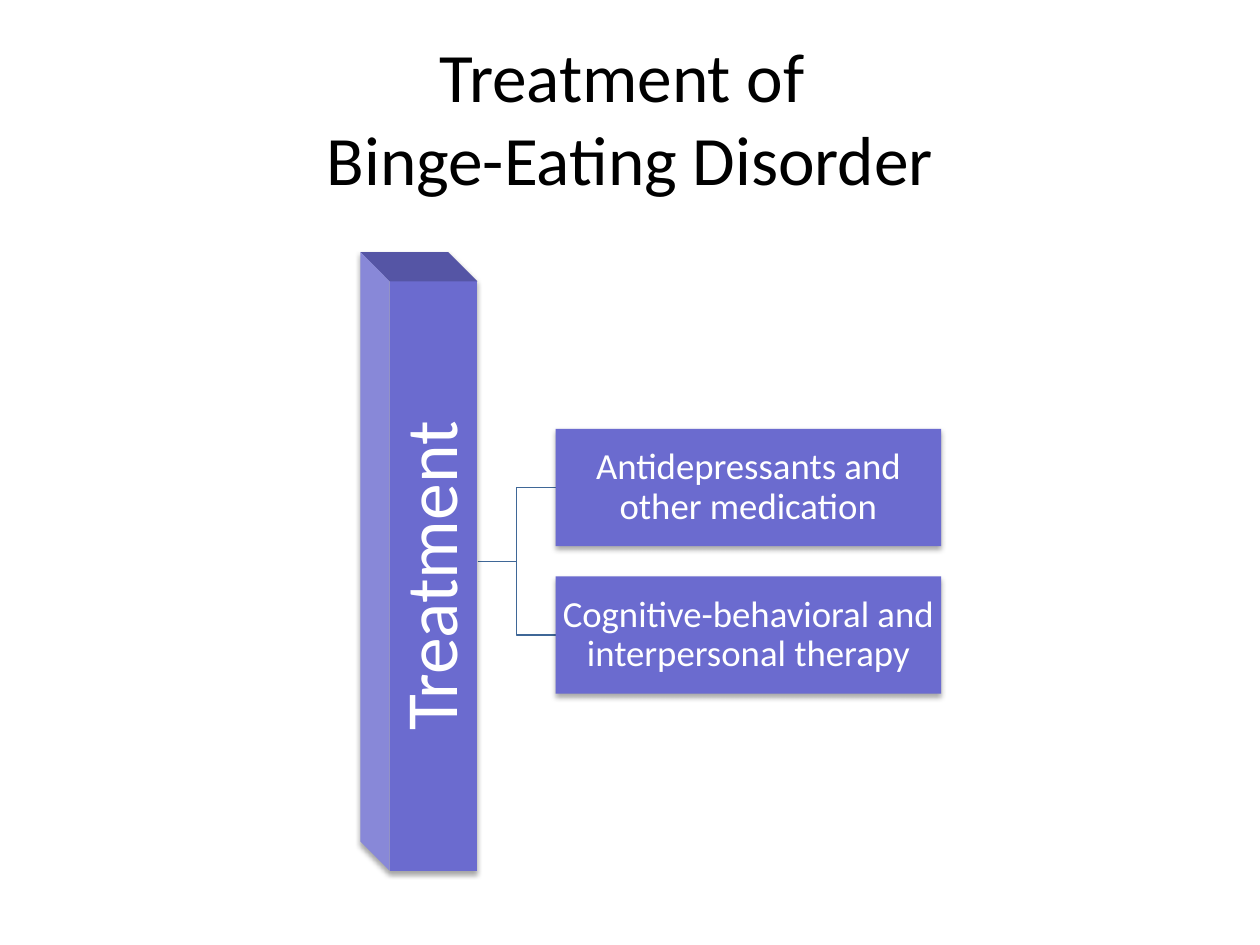
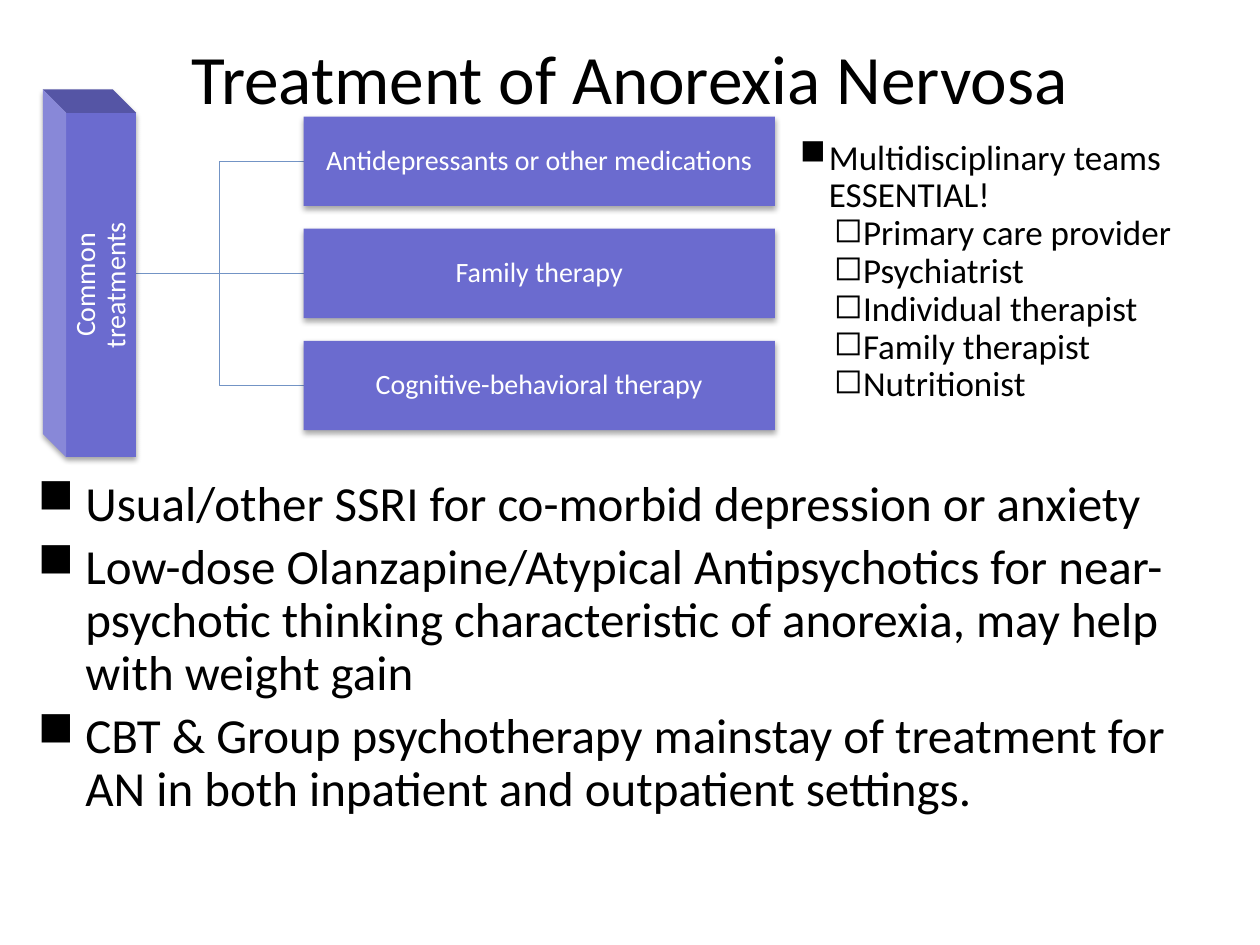
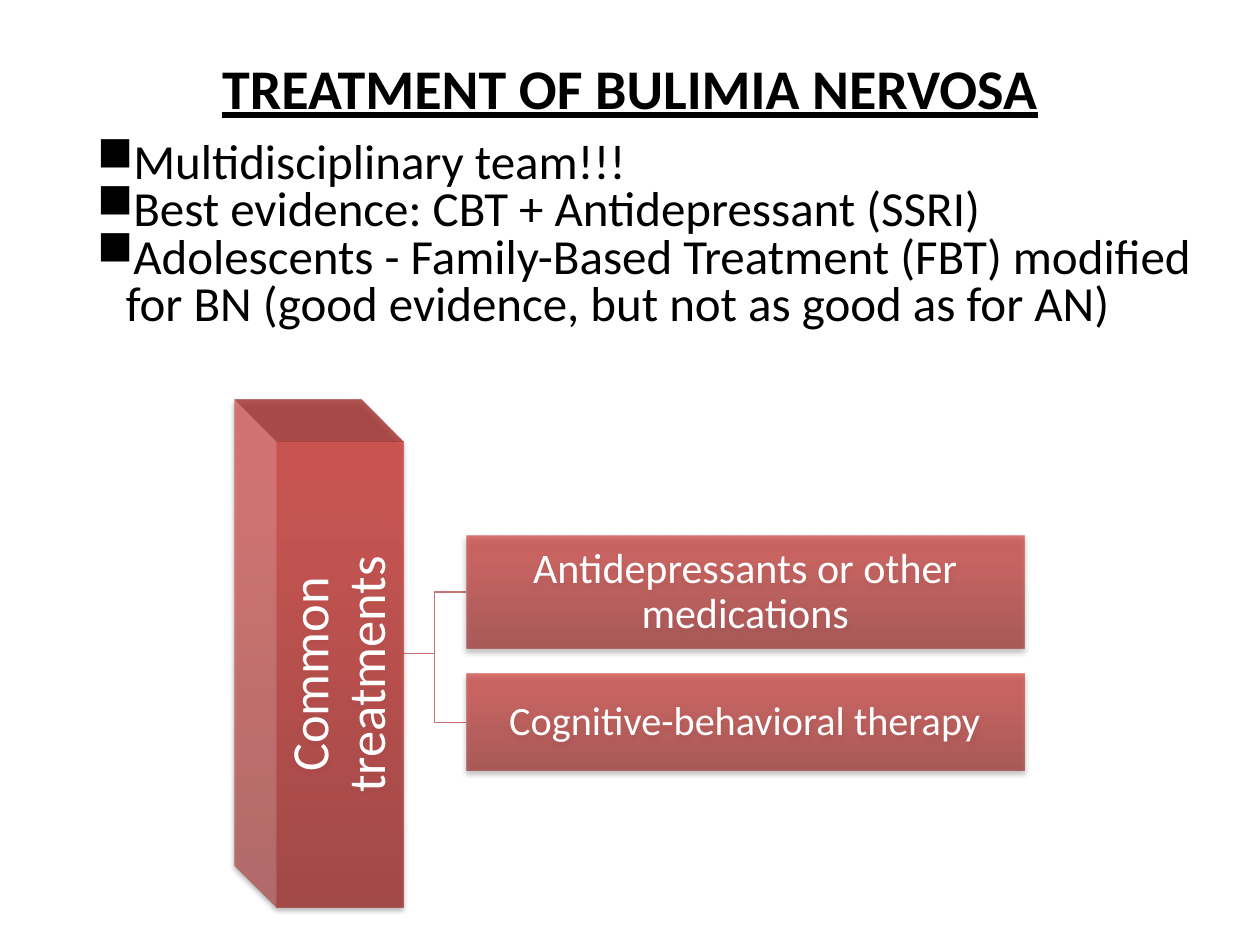
from dataclasses import dataclass

from pptx import Presentation
from pptx.dml.color import RGBColor
from pptx.enum.shapes import MSO_CONNECTOR, MSO_SHAPE
from pptx.enum.text import MSO_ANCHOR, MSO_AUTO_SIZE, PP_ALIGN
from pptx.oxml import parse_xml
from pptx.oxml.ns import nsdecls, qn
from pptx.util import Inches, Pt

FONT = "Calibri"
BLACK = RGBColor(0x00, 0x00, 0x00)
WHITE = RGBColor(0xFF, 0xFF, 0xFF)
VIOLET = RGBColor(0x6B, 0x6B, 0xCF)
DARK_BLUE = RGBColor(0x3F, 0x67, 0x97)
LIGHT_BLUE = RGBColor(0x73, 0x94, 0xC5)
ROSE = RGBColor(0xC7, 0x74, 0x72)
RED_STOPS = (
    (0, RGBColor(0x9C, 0x2F, 0x2D)),
    (80, RGBColor(0xCB, 0x3E, 0x3A)),
    (100, RGBColor(0xCE, 0x3B, 0x37)),
)
HANGING = 0.23


@dataclass
class Tree:
    label: str
    label_size: float
    cube: tuple
    branches: list
    branch_left: float
    branch_width: float
    gap: float
    line_color: RGBColor
    red: bool = False


@dataclass
class Bullet:
    text: str
    symbol: str = "■"
    margin: float = HANGING
    hanging: float = HANGING


def format_paragraph(paragraph, size, color, alignment=None, spacing=None):
    paragraph.alignment = alignment
    paragraph.line_spacing = spacing
    for run in paragraph.runs:
        run.font.name = FONT
        run.font.size = Pt(size)
        run.font.color.rgb = color


def add_titled_slide(presentation, text, height, size=39.6, emphasis=False):
    slide = presentation.slides.add_slide(presentation.slide_layouts[5])
    title = slide.shapes.title
    title.left, title.top = Inches(0.5), Inches(0.3)
    title.width, title.height = Inches(9), Inches(height)
    frame = title.text_frame
    frame.text = text
    frame.auto_size = MSO_AUTO_SIZE.NONE
    frame.vertical_anchor = MSO_ANCHOR.MIDDLE
    format_paragraph(frame.paragraphs[0], size, BLACK, PP_ALIGN.CENTER)
    if emphasis:
        for run in frame.paragraphs[0].runs:
            run.font.bold = True
            run.font.underline = True
    return slide


def set_red_gradient(shape, opacity):
    stops = "".join(
        f'<a:gs pos="{position * 1000}"><a:srgbClr val="{color}">'
        f'<a:alpha val="{opacity * 1000}"/></a:srgbClr></a:gs>'
        for position, color in RED_STOPS
    )
    gradient = parse_xml(
        f'<a:gradFill {nsdecls("a")} rotWithShape="0"><a:gsLst>{stops}</a:gsLst>'
        '<a:lin ang="16200000" scaled="0"/></a:gradFill>'
    )
    shape.fill.background()
    properties = shape.element.spPr
    properties.replace(properties.find(qn("a:noFill")), gradient)


def add_shadow(shape):
    shape.shadow.inherit = False
    shape.element.spPr.find(qn("a:effectLst")).append(parse_xml(
        f'<a:outerShdw {nsdecls("a")} blurRad="{Pt(3.1)}" dist="{Pt(1.8)}" '
        'dir="5400000" rotWithShape="0"><a:srgbClr val="000000">'
        '<a:alpha val="35000"/></a:srgbClr></a:outerShdw>'
    ))


def add_block(slide, kind, box, text, size, red_opacity=None):
    shape = slide.shapes.add_shape(kind, *map(Inches, box))
    if red_opacity:
        set_red_gradient(shape, red_opacity)
    else:
        shape.fill.solid()
        shape.fill.fore_color.rgb = VIOLET
    shape.line.fill.background()
    add_shadow(shape)
    frame = shape.text_frame
    frame.text = text
    frame.word_wrap = True
    frame.vertical_anchor = MSO_ANCHOR.MIDDLE
    frame.margin_left = frame.margin_right = Inches(0.01)
    frame.margin_top = frame.margin_bottom = Inches(0.01)
    format_paragraph(frame.paragraphs[0], size, WHITE, PP_ALIGN.CENTER, 0.9)
    return shape


def add_link(slide, start, end, color):
    kind = MSO_CONNECTOR.STRAIGHT if start[1] == end[1] else MSO_CONNECTOR.ELBOW
    link = slide.shapes.add_connector(kind, *map(Inches, (*start, *end)))
    link.line.color.rgb = color
    link.line.width = Pt(0.75)
    link.element.spPr.append(parse_xml(f'<a:effectLst {nsdecls("a")}/>'))


def add_tree(slide, tree):
    left, top, width, height = tree.cube
    middle = round(top + height / 2, 3)
    total = sum(branch[1] for branch in tree.branches)
    total += tree.gap * (len(tree.branches) - 1)
    branch_top = middle - total / 2
    boxes = []
    for _, branch_height, _ in tree.branches:
        boxes.append((tree.branch_left, branch_top, tree.branch_width, branch_height))
        branch_top += branch_height + tree.gap

    for box in reversed(boxes):
        end = (tree.branch_left, round(box[1] + box[3] / 2, 3))
        add_link(slide, (left + width, middle), end, tree.line_color)

    turned_box = (left + (width - height) / 2, top + (height - width) / 2, height, width)
    cube = add_block(slide, MSO_SHAPE.CUBE, turned_box, tree.label, tree.label_size,
                     80 if tree.red else None)
    cube.rotation = 270
    for (text, _, size), box in zip(tree.branches, boxes):
        add_block(slide, MSO_SHAPE.RECTANGLE, box, text, size, 70 if tree.red else None)


def add_bullets(slide, box, bullets, size, spacing, space_before=0):
    frame = slide.shapes.add_textbox(*map(Inches, box)).text_frame
    frame.word_wrap = True
    frame.auto_size = MSO_AUTO_SIZE.SHAPE_TO_FIT_TEXT
    for index, bullet in enumerate(bullets):
        paragraph = frame.add_paragraph() if index else frame.paragraphs[0]
        paragraph.text = bullet.text
        properties = paragraph._p.get_or_add_pPr()
        properties.set("marL", str(Inches(bullet.margin)))
        properties.set("indent", str(-Inches(bullet.hanging)))
        properties.append(parse_xml(
            f'<a:buChar {nsdecls("a")} char="{bullet.symbol}"/>'
        ))
        format_paragraph(paragraph, size, BLACK, spacing=spacing)
        paragraph.space_before = Pt(space_before if index else 0)


def build_binge_eating(presentation):
    slide = add_titled_slide(presentation, "Treatment of \vBinge-Eating Disorder", 1.25)
    add_tree(slide, Tree(
        "Treatment", 42, (2.86, 2, 0.93, 4.91),
        [("Antidepressants and other medication", 0.93, 21),
         ("Cognitive-behavioral and interpersonal therapy", 0.93, 21)],
        4.41, 3.06, 0.24, DARK_BLUE,
    ))


def build_anorexia(presentation):
    slide = add_titled_slide(presentation, "Treatment of Anorexia Nervosa", 0.62)
    therapies = ("Antidepressants or other medications", "Family therapy",
                 "Cognitive-behavioral therapy")
    add_tree(slide, Tree(
        "Common\vtreatments", 16, (0.34, 0.71, 0.74, 2.92),
        [(therapy, 0.71, 16) for therapy in therapies],
        2.41, 3.74, 0.18, LIGHT_BLUE,
    ))
    members = ("Primary care provider", "Psychiatrist", "Individual therapist",
               "Family therapist", "Nutritionist")
    team = [Bullet("Multidisciplinary teams ESSENTIAL!")]
    team += [Bullet(member, "◻", 0.5) for member in members]
    add_bullets(slide, (6.25, 1.06, 3.52, 2.22), team, 20, 0.9)
    notes = (
        "Usual/other SSRI for co-morbid depression or anxiety",
        "Low-dose Olanzapine/Atypical Antipsychotics for near-psychotic thinking "
        "characteristic of anorexia, may help with weight gain",
        "CBT & Group psychotherapy mainstay of treatment for AN in both inpatient "
        "and outpatient settings.",
    )
    add_bullets(slide, (0.2, 3.75, 9.3, 2.83),
                [Bullet(note, margin=0.38, hanging=0.38) for note in notes], 28, 0.9, 6)


def build_bulimia(presentation):
    slide = add_titled_slide(presentation, "TREATMENT OF BULIMIA NERVOSA", 0.78, 32, True)
    add_tree(slide, Tree(
        "Common\vtreatments", 30, (1.86, 3.17, 1.34, 4.03),
        [("Antidepressants or other medications", 0.9, 24),
         ("Cognitive-behavioral therapy", 0.77, 23)],
        3.7, 4.43, 0.2, ROSE, red=True,
    ))
    points = (
        "Multidisciplinary team!!!",
        "Best evidence: CBT + Antidepressant (SSRI)",
        "Adolescents - Family-Based Treatment (FBT) modified for BN "
        "(good evidence, but not as good as for AN)",
    )
    add_bullets(slide, (0.67, 1.08, 9, 1.62), [Bullet(point) for point in points], 28, 0.8)


def main():
    presentation = Presentation()
    presentation.slide_width = Inches(10)
    presentation.slide_height = Inches(7.5)
    build_binge_eating(presentation)
    build_anorexia(presentation)
    build_bulimia(presentation)
    presentation.save("out.pptx")


if __name__ == "__main__":
    main()
